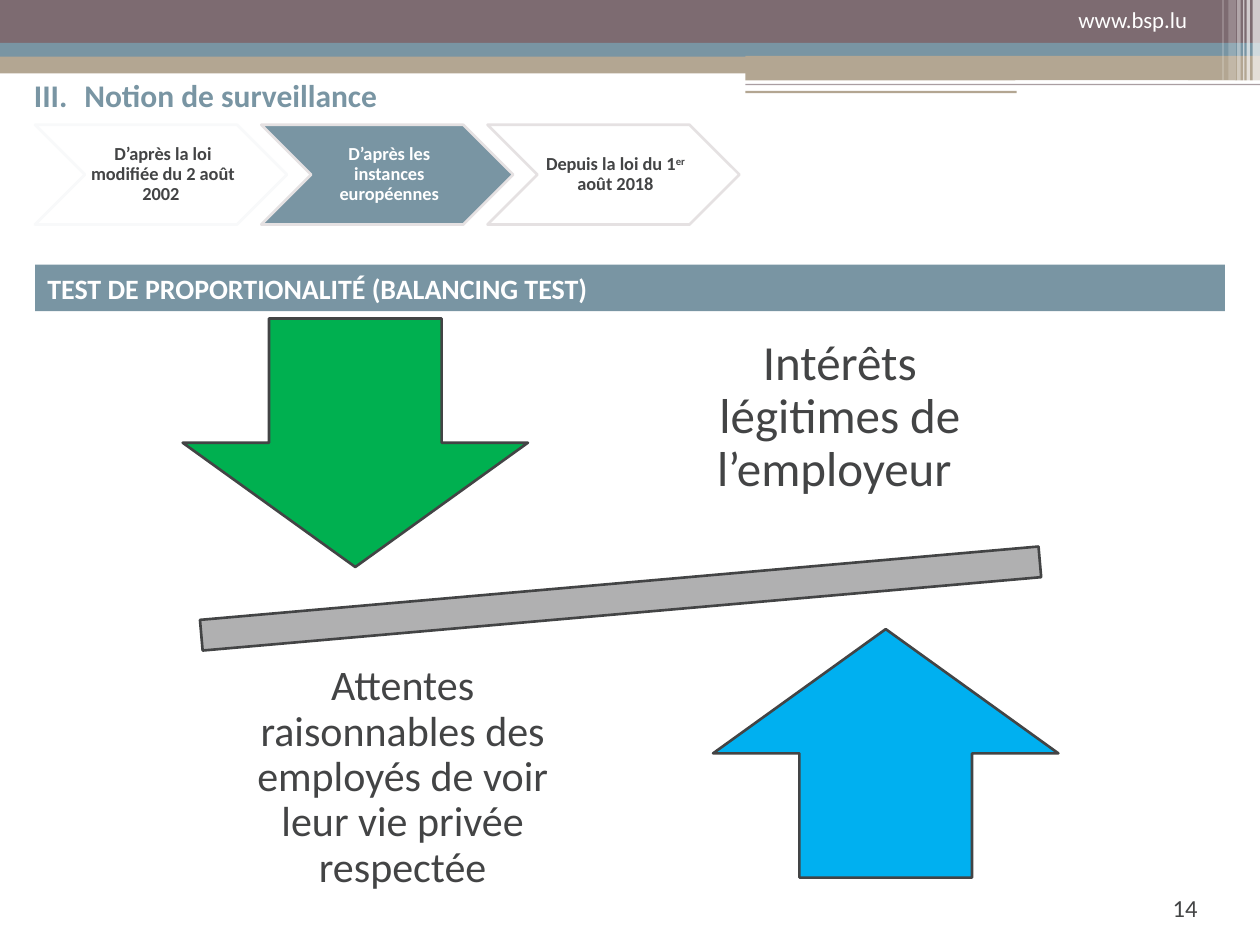
from lxml.etree import SubElement
from pptx import Presentation
from pptx.dml.color import RGBColor
from pptx.enum.shapes import MSO_SHAPE
from pptx.enum.text import MSO_ANCHOR, MSO_AUTO_SIZE, PP_ALIGN
from pptx.oxml.ns import qn
from pptx.util import Pt


class Theme:
    font = "Calibri"
    mauve, blue, sand = "7D6B71", "7995A3", "B3A692"
    white, ink, gray = "FFFFFF", "434445", "B0B0B1"
    green, cyan = "00B050", "00B0F0"
    pale_line, step_line = "F8F9FA", "E5E1E2"
    title, banner, number, address, step = 18, 16, 14, 13, 10.5
    interests, expectations = 28, 24


deck = Presentation()
deck.slide_width, deck.slide_height = Pt(720), Pt(540)
page = deck.slides.add_slide(deck.slide_layouts[5])


def add_figure(kind, left, top, width, height, fill=None, line=None, opacity=100):
    figure = page.shapes.add_shape(kind, Pt(left), Pt(top), Pt(width), Pt(height))
    figure.shadow.inherit = False
    if fill:
        figure.fill.solid()
        figure.fill.fore_color.rgb = RGBColor.from_string(fill)
        if opacity < 100:
            color = figure.fill._xPr.find(qn("a:solidFill"))[0]
            SubElement(color, qn("a:alpha")).set("val", str(opacity * 1000))
    else:
        figure.fill.background()
    if line:
        figure.line.color.rgb = RGBColor.from_string(line)
        figure.line.width = Pt(1.5)
    else:
        figure.line.fill.background()
    return figure


def write(box, text, size, color, align, bold=False, anchor=MSO_ANCHOR.MIDDLE,
          insets=(7.2, 3.6, 7.2, 3.6), spacing=None):
    frame = box.text_frame
    frame.text = text
    frame.word_wrap = True
    frame.auto_size = MSO_AUTO_SIZE.NONE
    frame.vertical_anchor = anchor
    frame.margin_left, frame.margin_top, frame.margin_right, frame.margin_bottom = map(Pt, insets)
    para = frame.paragraphs[0]
    para.alignment = align
    para.line_spacing = spacing
    para.font.name, para.font.size, para.font.bold = Theme.font, Pt(size), bold
    para.font.color.rgb = RGBColor.from_string(color)
    return para


# Header bands
for left, top, width, height, fill in [
    (426, 28, 294, 7, Theme.blue),
    (-3, 31, 521, 11, Theme.sand),
    (-3, -2, 723, 26.5, Theme.mauve),
    (-3, 24.5, 723, 8, Theme.blue),
    (426, 32, 294, 14, Theme.sand),
]:
    add_figure(MSO_SHAPE.RECTANGLE, left, top, width, height, fill)
add_figure(MSO_SHAPE.ROUNDED_RECTANGLE, 580, 46, 126, 2.7, Theme.white)

# Translucent stripes at the right edge
for left, width, height, opacity in [
    (715.8, 4.2, 51, 65), (712.3, 2, 51, 65), (710.4, 0.7, 51, 60),
    (707, 2, 51, 40), (702, 4.3, 48, 20), (698.5, 0.7, 48, 30),
]:
    add_figure(MSO_SHAPE.RECTANGLE, left, -2, width, height, Theme.white, opacity=opacity)

# Thin rules under the header
add_figure(MSO_SHAPE.RECTANGLE, 426, 48, 294, 0.7, Theme.mauve, opacity=65)
add_figure(MSO_SHAPE.RECTANGLE, 426, 51.9, 155, 1.3, Theme.sand)

# Page number and web address
for text, left, top, size, color in [
    ("14", 587, 507, Theme.number, Theme.ink),
    ("www.bsp.lu", 581, 0, Theme.address, Theme.white),
]:
    box = page.shapes.add_textbox(Pt(left), Pt(top), Pt(104.4), Pt(36))
    write(box, text, size, color, PP_ALIGN.RIGHT, anchor=MSO_ANCHOR.TOP)

# Balance: beam, arrows and the two sides
beam = add_figure(MSO_SHAPE.MATH_MINUS, 27.4, 304.6, 654.5, 74.9, Theme.gray, Theme.ink)
beam.rotation = 355
for kind, left, top, fill in [
    (MSO_SHAPE.DOWN_ARROW, 104.4, 182, Theme.green),
    (MSO_SHAPE.UP_ARROW, 407.5, 359.5, Theme.cyan),
]:
    add_figure(kind, left, top, 197.3, 142, fill, Theme.ink)
for text, left, top, size, inset in [
    ("Intérêts légitimes de l’employeur ", 374.4, 164.2, Theme.interests, 15.7),
    ("Attentes raisonnables des employés de voir leur vie privée respectée",
     124.6, 370, Theme.expectations, 13.5),
]:
    box = page.shapes.add_textbox(Pt(left), Pt(top), Pt(211), Pt(149))
    write(box, text, size, Theme.ink, PP_ALIGN.CENTER, insets=(inset,) * 4, spacing=0.9)

# Chevron steps
steps = [
    ("D’après la loi modifiée du 2 août 2002 ", None, Theme.pale_line, Theme.ink),
    ("D’après les instances européennes", Theme.blue, Theme.step_line, Theme.white),
    ("Depuis la loi du 1", None, Theme.step_line, Theme.ink),
]
for index, (text, fill, line, color) in enumerate(steps):
    left = 20 + index * 129.3
    add_figure(MSO_SHAPE.CHEVRON, left, 71.3, 144, 57, fill, line)
    box = page.shapes.add_textbox(Pt(left + 28.4), Pt(71.3), Pt(87.2), Pt(57))
    para = write(box, text, Theme.step, color, PP_ALIGN.CENTER, bold=True,
                 insets=(3.6, 1.3, 1.3, 1.3), spacing=0.9)

# Ordinal and end of the last step
ordinal = para.add_run()
ordinal.text = "er"
ordinal._r.get_or_add_rPr().set("baseline", "30000")
para.add_run().text = " août 2018"

# Title
title = page.shapes.title
title.left, title.top, title.width, title.height = Pt(12.2), Pt(-8), Pt(699), Pt(124.6)
para = write(title, "III.\tNotion de surveillance", Theme.title, Theme.blue, PP_ALIGN.LEFT, bold=True)
properties = para._p.get_or_add_pPr()
properties.set("marL", str(Pt(28.8)))
properties.set("indent", str(Pt(-28.8)))

# Section banner
banner = add_figure(MSO_SHAPE.RECTANGLE, 20, 151.2, 680, 26.6, Theme.blue)
write(banner, "TEST DE PROPORTIONALITÉ (BALANCING TEST)", Theme.banner, Theme.white,
      PP_ALIGN.LEFT, bold=True)

deck.save("out.pptx")
